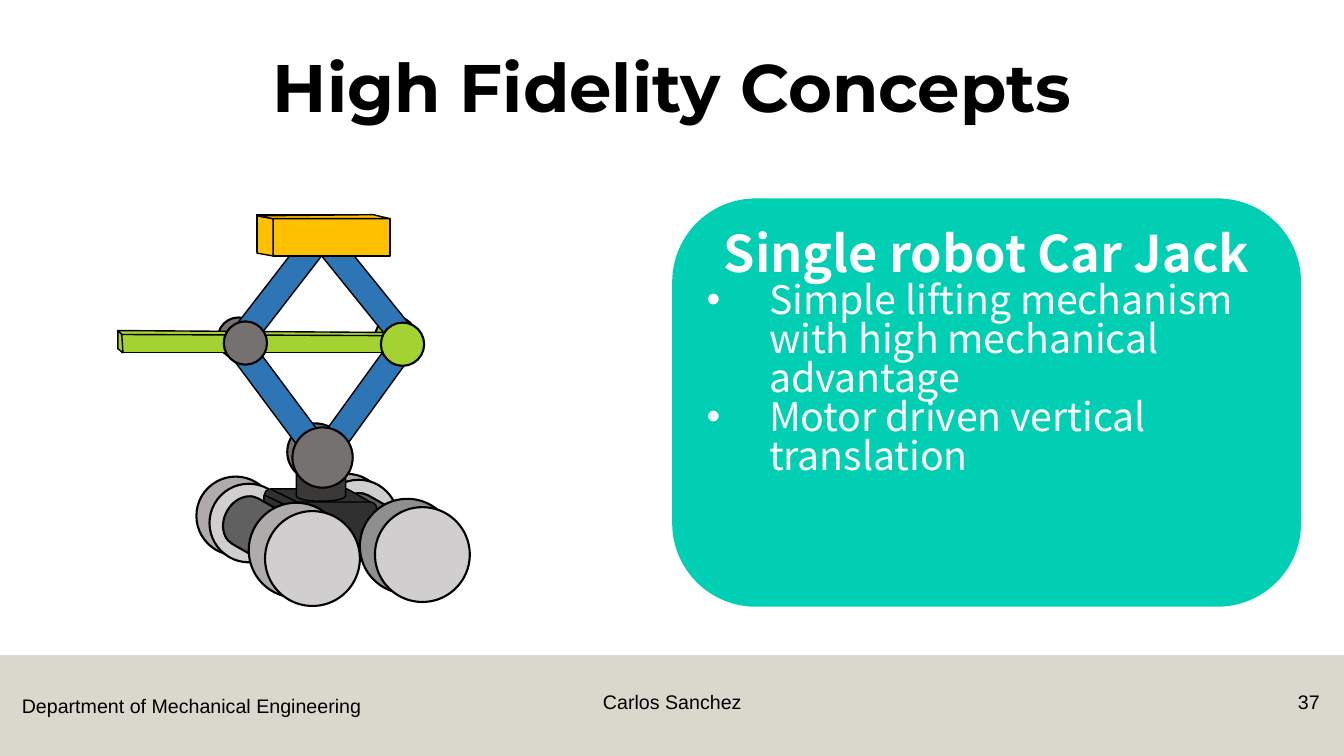
from dataclasses import dataclass

from lxml import etree
from pptx import Presentation
from pptx.dml.color import RGBColor
from pptx.enum import shapes, text
from pptx.oxml import ns
from pptx.util import Cm, Pt

PRESET = shapes.MSO_SHAPE


# Theme: colours, fonts and type sizes
@dataclass(frozen=True)
class Theme:
    black: str = "000000"
    white: str = "FFFFFF"
    footer: str = "B7B09C"
    panel: str = "00CFB4"
    steel: str = "767171"
    green: str = "A4D233"
    blue: str = "2E75B6"
    yellow: str = "FFC000"
    tyre: str = "AFABAB"
    dark_tyre: str = "8F8F8F"
    wheel_face: str = "D0CECE"
    axle: str = "606060"
    chassis: str = "303030"
    post: str = "3B3838"
    title_font: str = "Montserrat"
    body_font: str = "Noto Sans CJK JP"
    footer_font: str = "Arial"
    title_size: int = 48
    heading_size: int = 36
    list_size: int = 28
    footer_size: int = 14


THEME = Theme()


# Part descriptions, lengths in centimetres
@dataclass(frozen=True)
class Solid:
    preset: shapes.MSO_SHAPE
    left: float
    top: float
    width: float
    height: float
    fill: str
    weight: float = 1
    rotation: float = 0


@dataclass(frozen=True)
class Outline:
    points: tuple[tuple[float, float], ...]
    fill: str


@dataclass(frozen=True)
class Edge:
    start: tuple[float, float]
    end: tuple[float, float]


@dataclass(frozen=True)
class Label:
    words: str
    left: float
    top: float
    width: float
    height: float
    align: text.PP_ALIGN
    wrap: bool = True


def disc(left: float, top: float, size: float, fill: str) -> Solid:
    return Solid(PRESET.OVAL, left, top, size, size, fill, 1.5)


def axle(left: float, top: float) -> Solid:
    return Solid(PRESET.FLOWCHART_TERMINATOR, left, top, 3.3, 1.32, THEME.axle, 1.5, 29.6)


def arm(left: float, top: float, rotation: float) -> Solid:
    return Solid(PRESET.RECTANGLE, left, top, 3.35, 0.64, THEME.blue, 1, rotation)


def block(left: float, top: float, width: float, height: float, fill: str) -> Solid:
    return Solid(PRESET.RECTANGLE, left, top, width, height, fill)


REAR_WHEEL, FRONT_WHEEL = 1.98, 2.39
JACK = [
    # Rear joints
    disc(5.49, 8.0, 1.04, THEME.steel),
    disc(9.45, 7.98, 1.04, THEME.green),
    disc(7.24, 10.67, 1.44, THEME.steel),
    # Rear wheels
    disc(4.95, 12.01, REAR_WHEEL, THEME.tyre),
    disc(5.28, 12.19, REAR_WHEEL, THEME.wheel_face),
    disc(7.75, 11.94, REAR_WHEEL, THEME.tyre),
    disc(8.05, 12.09, REAR_WHEEL, THEME.wheel_face),
    # Chassis and front wheels
    axle(8.28, 12.95),
    Outline(((6.83, 12.32), (8.74, 12.32), (8.84, 12.37), (9.42, 12.7), (9.4, 12.85),
             (9.4, 13.56), (9.35, 13.69), (9.22, 13.74), (7.34, 13.74), (7.21, 13.69),
             (7.16, 13.56), (7.16, 13.39), (6.83, 13.39), (6.7, 13.34), (6.65, 13.21),
             (6.65, 12.5), (6.7, 12.37)), THEME.chassis),
    Solid(PRESET.ROUNDED_RECTANGLE, 7.24, 12.65, 2.26, 1.04, THEME.chassis),
    axle(5.51, 13.03),
    disc(6.27, 12.67, FRONT_WHEEL, THEME.tyre),
    disc(6.68, 12.88, FRONT_WHEEL, THEME.wheel_face),
    Edge((6.65, 12.47), (7.14, 12.7)),
    Edge((6.81, 12.32), (7.49, 12.65)),
    disc(9.07, 12.57, FRONT_WHEEL, THEME.dark_tyre),
    disc(9.45, 12.78, FRONT_WHEEL, THEME.wheel_face),
    Solid(PRESET.CAN, 7.47, 11.56, 1.24, 1.07, THEME.post),
    # Lower arms and hub
    arm(5.28, 9.65, 53.3),
    arm(7.57, 9.65, 305.9),
    disc(7.37, 10.77, 1.52, THEME.steel),
    # Lead screw
    block(3.07, 8.43, 7.01, 0.46, THEME.green),
    Outline(((2.97, 8.33), (3.07, 8.43), (3.1, 8.89), (2.97, 8.79)), THEME.green),
    Outline(((2.97, 8.33), (9.96, 8.38), (10.11, 8.46), (3.07, 8.43)), THEME.green),
    # Upper arms
    arm(5.46, 6.86, 307.7),
    arm(7.47, 6.91, 51.1),
    # Lifting platform
    block(6.48, 5.41, 2.95, 0.94, THEME.yellow),
    block(6.88, 5.51, 2.95, 0.94, THEME.yellow),
    Outline(((6.48, 5.44), (6.88, 5.51), (6.88, 6.45), (6.48, 6.38)), THEME.yellow),
    Outline(((6.5, 5.44), (9.4, 5.41), (9.83, 5.51), (6.88, 5.51)), THEME.yellow),
    # Front joints
    disc(9.6, 8.13, 1.09, THEME.green),
    disc(5.64, 8.1, 1.09, THEME.steel),
]
FOOTER_LABELS = [
    Label("Department of Mechanical Engineering", 0.3, 17.35, 9.12, 0.86, text.PP_ALIGN.LEFT, False),
    Label("37", 31.55, 17.25, 1.96, 1.02, text.PP_ALIGN.RIGHT),
    Label("Carlos Sanchez", 11.23, 17.25, 11.43, 1.02, text.PP_ALIGN.CENTER),
]
HEADING = "Single robot Car Jack"
BENEFITS = ["Simple lifting mechanism with high mechanical advantage",
            "Motor driven vertical translation"]


def colour(value: str) -> RGBColor:
    return RGBColor.from_string(value)


def paint(shape, fill: str) -> None:
    shape.fill.solid()
    shape.fill.fore_color.rgb = colour(fill)


def format_runs(paragraph, font: str, size: int, value: str, bold: bool = False) -> None:
    for run in paragraph.runs:
        run.font.name, run.font.size, run.font.bold = font, Pt(size), bold
        run.font.color.rgb = colour(value)


def place(shape, left: float, top: float, width: float, height: float) -> None:
    shape.left, shape.top, shape.width, shape.height = map(Cm, (left, top, width, height))


def draw_part(slide, part: Solid | Outline | Edge) -> None:
    if isinstance(part, Edge):
        shape = slide.shapes.add_connector(
            shapes.MSO_CONNECTOR.STRAIGHT, *map(Cm, part.start + part.end))
        etree.SubElement(shape._element.spPr, ns.qn("a:effectLst"))
    elif isinstance(part, Outline):
        points = [(Cm(x), Cm(y)) for x, y in part.points]
        builder = slide.shapes.build_freeform(*points[0])
        builder.add_line_segments(points[1:], close=True)
        shape = builder.convert_to_shape()
    else:
        shape = slide.shapes.add_shape(
            part.preset, *map(Cm, (part.left, part.top, part.width, part.height)))
        shape.rotation = part.rotation
    if not isinstance(part, Edge):
        shape.shadow.inherit = False
        paint(shape, part.fill)
    shape.line.color.rgb = colour(THEME.black)
    shape.line.width = Pt(part.weight if isinstance(part, Solid) else 1)


def draw_footer(slide) -> None:
    band = slide.shapes.add_shape(PRESET.RECTANGLE, 0, Cm(16.51), Cm(33.87), Cm(2.54))
    band.shadow.inherit = False
    paint(band, THEME.footer)
    band.line.fill.background()
    tint = band._element.spPr.find(".//" + ns.qn("a:srgbClr"))
    etree.SubElement(tint, ns.qn("a:alpha"), val="50000")
    for label in FOOTER_LABELS:
        box = slide.shapes.add_textbox(*map(Cm, (label.left, label.top, label.width, label.height)))
        box.text_frame.text = label.words
        box.text_frame.word_wrap = label.wrap
        paragraph = box.text_frame.paragraphs[0]
        paragraph.alignment = label.align
        format_runs(paragraph, THEME.footer_font, THEME.footer_size, THEME.black)


def fill_title(title) -> None:
    place(title, 2.34, 1.24, 29.21, 2.77)
    frame = title.text_frame
    frame.text = "High Fidelity Concepts"
    frame.vertical_anchor = text.MSO_ANCHOR.TOP
    frame.auto_size = text.MSO_AUTO_SIZE.NONE
    paragraph = frame.paragraphs[0]
    paragraph.alignment = text.PP_ALIGN.CENTER
    paragraph.line_spacing = 0.9
    format_runs(paragraph, THEME.title_font, THEME.title_size, THEME.black, True)


def fill_panel(panel) -> None:
    place(panel, 16.94, 5, 15.85, 10.29)
    geometry = etree.SubElement(panel._element.spPr, ns.qn("a:prstGeom"), prst="roundRect")
    guides = etree.SubElement(geometry, ns.qn("a:avLst"))
    etree.SubElement(guides, ns.qn("a:gd"), name="adj", fmla="val 20500")
    paint(panel, THEME.panel)
    frame = panel.text_frame
    frame.text = "\n".join([HEADING, *BENEFITS])
    frame.vertical_anchor = text.MSO_ANCHOR.TOP
    frame.auto_size = text.MSO_AUTO_SIZE.NONE
    frame.margin_top = Cm(0.25)
    for index, paragraph in enumerate(frame.paragraphs):
        heading = index == 0
        indent = 0 if heading else Cm(1.57)
        properties = paragraph._p.get_or_add_pPr()
        properties.set("marL", str(indent))
        properties.set("indent", str(-indent))
        if heading:
            etree.SubElement(properties, ns.qn("a:buNone"))
        else:
            etree.SubElement(properties, ns.qn("a:buChar"), char="•")
        paragraph.alignment = text.PP_ALIGN.CENTER if heading else text.PP_ALIGN.LEFT
        paragraph.space_before = Pt(0)
        paragraph.line_spacing = 0.83
        size = THEME.heading_size if heading else THEME.list_size
        format_runs(paragraph, THEME.body_font, size, THEME.white, heading)


def main() -> None:
    presentation = Presentation()
    presentation.slide_width, presentation.slide_height = Cm(33.87), Cm(19.05)
    slide = presentation.slides.add_slide(presentation.slide_layouts[1])
    draw_footer(slide)
    fill_title(slide.shapes.title)
    for part in JACK:
        draw_part(slide, part)
    fill_panel(slide.placeholders[1])
    presentation.save("out.pptx")


if __name__ == "__main__":
    main()
